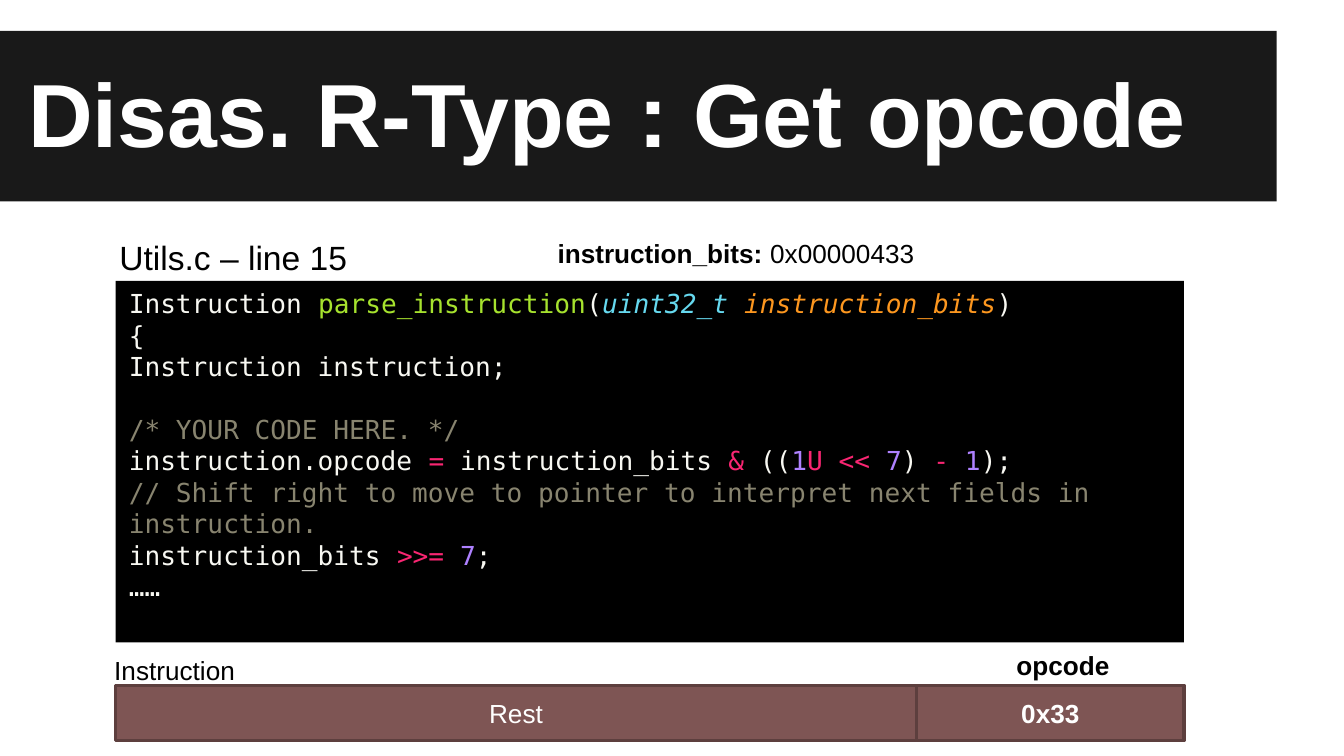
from pptx import Presentation
from pptx.dml.color import RGBColor
from pptx.enum.shapes import MSO_SHAPE as Shape
from pptx.enum.text import MSO_ANCHOR as Anchor, MSO_AUTO_SIZE as AutoSize, PP_ALIGN as Align
from pptx.util import Inches, Pt

COLOURS = {
    "banner": "191919", "black": "000000", "white": "FFFFFF",
    "field": "7E5554", "border": "5D3F3E",
    "plain": "F8F8F2", "function": "A6E22E", "type": "66D9EF",
    "parameter": "FD971F", "comment": "88846F", "operator": "F92672", "number": "AE81FF",
}
SANS, MONO = "Arial", "DejaVu Sans Mono"
TITLE = "Disas. R-Type : Get opcode"
ITALIC_KINDS = ("type", "parameter")
CODE = [
    [("Instruction ", "plain"), ("parse_instruction", "function"), ("(", "plain"),
     ("uint32_t ", "type"), ("instruction_bits", "parameter"), (")", "plain")],
    [("{", "plain")],
    [("Instruction instruction;", "plain")],
    [("/* YOUR CODE HERE. */", "comment")],
    [("instruction.opcode ", "plain"), ("= ", "operator"), ("instruction_bits ", "plain"),
     ("&", "operator"), (" ((", "plain"), ("1", "number"), ("U << ", "operator"),
     ("7", "number"), (") ", "plain"), ("- ", "operator"), ("1", "number"), (");", "plain")],
    [("// Shift right to move to pointer to interpret next fields in instruction.", "comment")],
    [("instruction_bits ", "plain"), (">>= ", "operator"), ("7", "number"), (";", "plain")],
    [("……", "plain")],
]
GAP_BEFORE_LINE = 3
LABELS = [
    ([("Utils.c – line 15", False)], (0.79, 1.67, 4.96, 0.42), 18, Align.LEFT, 1.15),
    ([("instruction_bits: ", True), ("0x00000433", False)],
     (4.05, 1.72, 2.92, 0.34), 14, Align.LEFT, 1),
    ([("Instruction", False)], (0.75, 4.82, 1.1, 0.34), 14, Align.CENTER, 1),
    ([("opcode", True)], (7.46, 4.78, 0.9, 0.34), 14, Align.CENTER, 1),
]
FIELDS = [("Rest", 5.96, False), ("0x33", 1.99, True)]
LEFT, FIELD_TOP, FIELD_HEIGHT = 0.86, 5.1, 0.41


def colour(name):
    return RGBColor.from_string(COLOURS[name])


def style(font, size, name, face=SANS, bold=False):
    font.size, font.name, font.bold = Pt(size), face, bold
    font.color.rgb = colour(name)


def add_box(page, place, fill, border=None):
    box = page.shapes.add_shape(Shape.RECTANGLE, *map(Inches, place))
    box.shadow.inherit = False
    box.fill.solid()
    box.fill.fore_color.rgb = colour(fill)
    if border:
        box.line.color.rgb = colour(border)
        box.line.width = Pt(2)
    else:
        box.line.fill.background()
    return box


def add_title(page):
    title = page.shapes.title
    title.left, title.top, title.width, title.height = map(Inches, (-0.22, 0.52, 10.43, 0.81))
    frame = title.text_frame
    frame.text = TITLE
    frame.auto_size = AutoSize.NONE
    frame.vertical_anchor = Anchor.BOTTOM
    frame.margin_left = frame.margin_right = frame.margin_top = frame.margin_bottom = Inches(0.1)
    para = frame.paragraphs[0]
    para.alignment = Align.LEFT
    para._p.get_or_add_pPr().set("indent", str(Inches(0.33)))
    style(para.font, 48, "white", bold=True)
    banner = add_box(page, (0, 0.23, 9.5, 1.27), "banner")
    title.element.addprevious(banner.element)


def add_label(page, spans, place, size, alignment, spacing):
    frame = page.shapes.add_textbox(*map(Inches, place)).text_frame
    frame.word_wrap = alignment == Align.LEFT and len(spans) == 1
    para = frame.paragraphs[0]
    para.alignment, para.line_spacing = alignment, spacing
    for text, bold in spans:
        span = para.add_run()
        span.text = text
        style(span.font, size, "black", bold=bold)


def add_code(page):
    frame = add_box(page, (LEFT, 2.09, 7.95, 2.69), "black").text_frame
    frame.word_wrap = True
    frame.vertical_anchor = Anchor.TOP
    for number, line in enumerate(CODE):
        para = frame.add_paragraph() if number else frame.paragraphs[0]
        para.alignment = Align.LEFT
        if number == GAP_BEFORE_LINE:
            para.space_before = Pt(17)
        for text, kind in line:
            span = para.add_run()
            span.text = text
            style(span.font, 14, kind, MONO)
            span.font.italic = kind in ITALIC_KINDS


def add_fields(page):
    left = LEFT
    for text, width, bold in FIELDS:
        box = add_box(page, (left, FIELD_TOP, width, FIELD_HEIGHT), "field", "border")
        box.text_frame.text = text
        box.text_frame.vertical_anchor = Anchor.MIDDLE
        para = box.text_frame.paragraphs[0]
        para.alignment = Align.CENTER
        style(para.font, 14, "white", bold=bold)
        left += width


def main():
    deck = Presentation()
    deck.slide_width = Inches(10)
    deck.slide_height = deck.slide_width * 9 // 16
    page = deck.slides.add_slide(deck.slide_layouts[5])
    add_title(page)
    add_code(page)
    add_fields(page)
    for label in LABELS:
        add_label(page, *label)
    deck.save("out.pptx")


if __name__ == "__main__":
    main()
